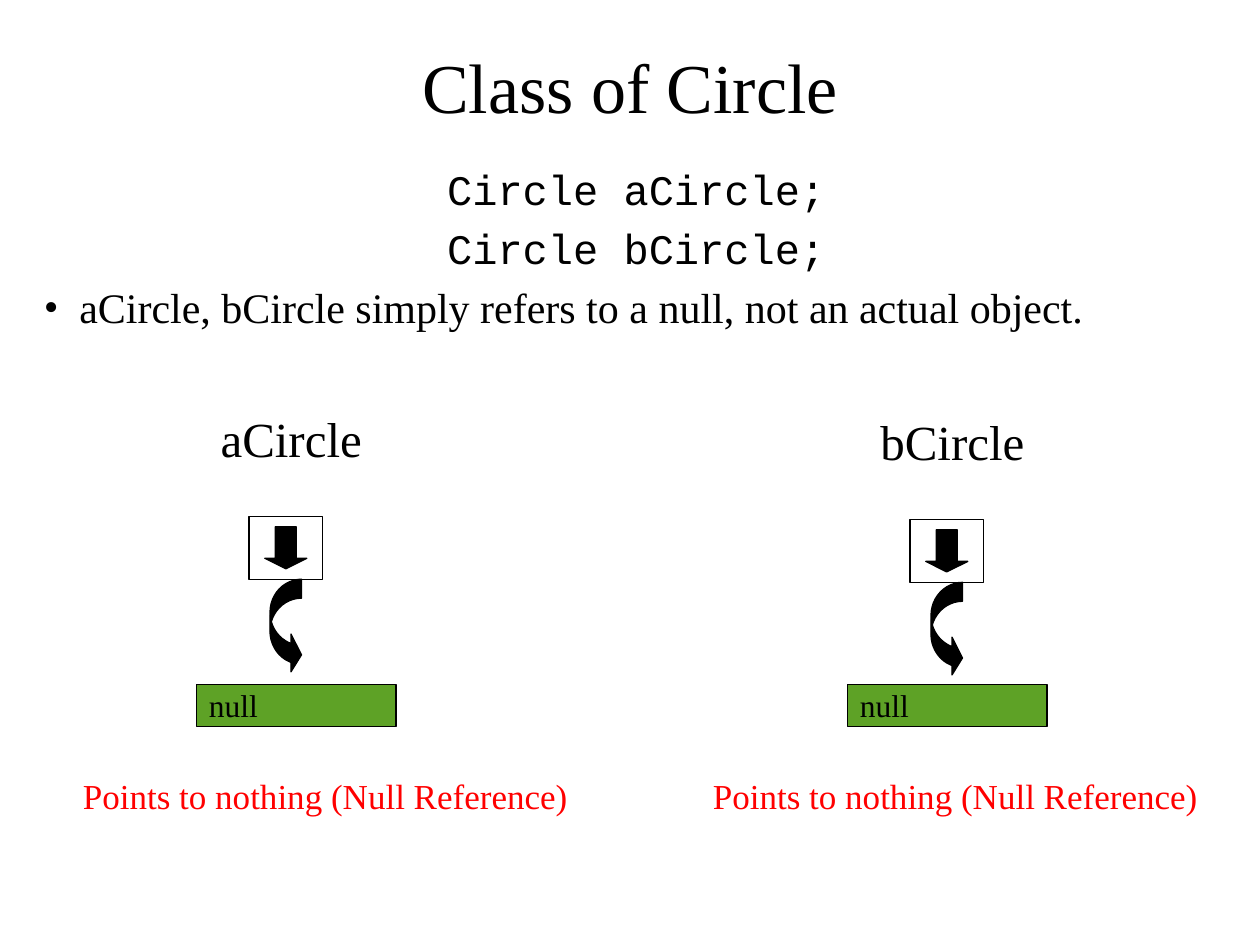
from lxml import etree
from pptx import Presentation
from pptx.dml.color import RGBColor
from pptx.enum import shapes, text
from pptx.oxml import ns
from pptx.util import Pt

COLORS = {"ink": "000000", "paper": "FFFFFF", "null": "5EA226", "warning": "FF0000"}
SERIF, MONO = "Times New Roman", "Courier New"
KINDS = shapes.MSO_SHAPE
LEFT, CENTER = text.PP_ALIGN.LEFT, text.PP_ALIGN.CENTER
TOP, MIDDLE = text.MSO_ANCHOR.TOP, text.MSO_ANCHOR.MIDDLE


class Sketch:
    """Draws text and outlined shapes on one slide, measured in points."""

    def __init__(self, slide):
        self.slide = slide

    def color(self, name):
        return RGBColor.from_string(COLORS[name])

    def style(self, paragraph, size, font=SERIF, color="ink", align=LEFT):
        paragraph.alignment = align
        for run in paragraph.runs:
            run.font.size = Pt(size)
            run.font.name = font
            run.font.color.rgb = self.color(color)

    def label(self, words, box, size, color="ink", align=LEFT, anchor=TOP, wrap=False):
        frame = self.slide.shapes.add_textbox(*map(Pt, box)).text_frame
        frame.word_wrap = wrap
        if not wrap:
            frame.auto_size = text.MSO_AUTO_SIZE.SHAPE_TO_FIT_TEXT
        frame.vertical_anchor = anchor
        frame.text = words
        self.style(frame.paragraphs[0], size, color=color, align=align)

    def body(self, box, lines, size):
        frame = self.slide.shapes.add_textbox(*map(Pt, box)).text_frame
        frame.word_wrap = True
        for index, (words, font, align, bullet) in enumerate(lines):
            paragraph = frame.add_paragraph() if index else frame.paragraphs[0]
            paragraph.text = words
            paragraph.space_before = Pt(5)
            self.style(paragraph, size, font, align=align)
            props = paragraph._p.get_or_add_pPr()
            props.set("marL", str(Pt(20.25)))
            props.set("indent", str(-Pt(20.25)))
            if bullet:
                etree.SubElement(props, ns.qn("a:buFont")).set("typeface", font)
                etree.SubElement(props, ns.qn("a:buChar")).set("char", bullet)

    def shape(self, kind, box, fill, adjust=(), words=""):
        figure = self.slide.shapes.add_shape(kind, *map(Pt, box))
        figure.shadow.inherit = False
        figure.fill.solid()
        figure.fill.fore_color.rgb = self.color(fill)
        figure.line.color.rgb = self.color("ink")
        figure.line.width = Pt(0.75)
        for index, value in enumerate(adjust):
            figure.adjustments[index] = value
        if words:
            frame = figure.text_frame
            frame.word_wrap = False
            frame.vertical_anchor = MIDDLE
            frame.text = words
            self.style(frame.paragraphs[0], 18)

    def reference(self, name, name_x, box_x, top, null_x, note_x):
        self.label(name, (name_x, top - 65, 97, 41), 28)
        self.shape(KINDS.RECTANGLE, (box_x, top, 42, 36), "paper")
        self.shape(KINDS.CURVED_RIGHT_ARROW, (box_x + 12, top + 36, 18, 54), "ink",
                   (0.6, 1.2, 0.333))
        self.shape(KINDS.DOWN_ARROW, (box_x + 9, top + 6, 24, 24), "ink", (0.5, 0.25))
        self.shape(KINDS.RECTANGLE, (null_x, 391, 114, 24), "null", words="null")
        self.label("Points to nothing (Null Reference)", (note_x, 439, 293, 32), 20, "warning")


def main():
    deck = Presentation()
    deck.slide_width, deck.slide_height = Pt(720), Pt(540)
    sketch = Sketch(deck.slides.add_slide(deck.slide_layouts[6]))
    sketch.label("Class of Circle", (36, 3.6, 648, 90), 40, align=CENTER, anchor=MIDDLE, wrap=True)
    sketch.body((18, 90, 691, 392), [
        ("Circle aCircle;", MONO, CENTER, None),
        ("Circle bCircle;", MONO, CENTER, None),
        ("aCircle, bCircle simply refers to a null, not an actual object.", SERIF, LEFT, "•"),
    ], 24)
    sketch.reference("aCircle", 119, 142.3, 295, 112.3, 40.3)
    sketch.reference("bCircle", 496, 520, 296.8, 484.3, 400.3)
    deck.save("out.pptx")


if __name__ == "__main__":
    main()
